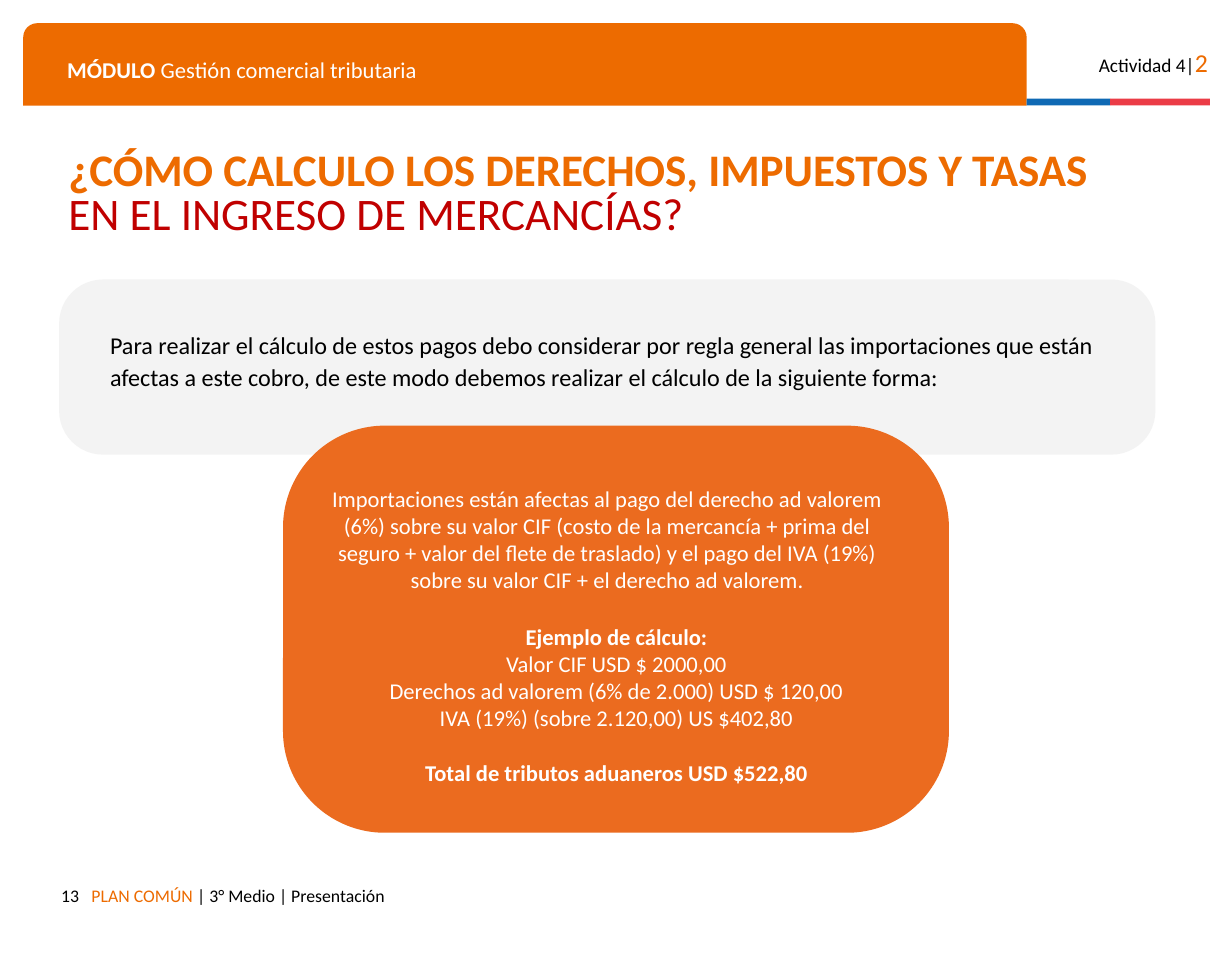
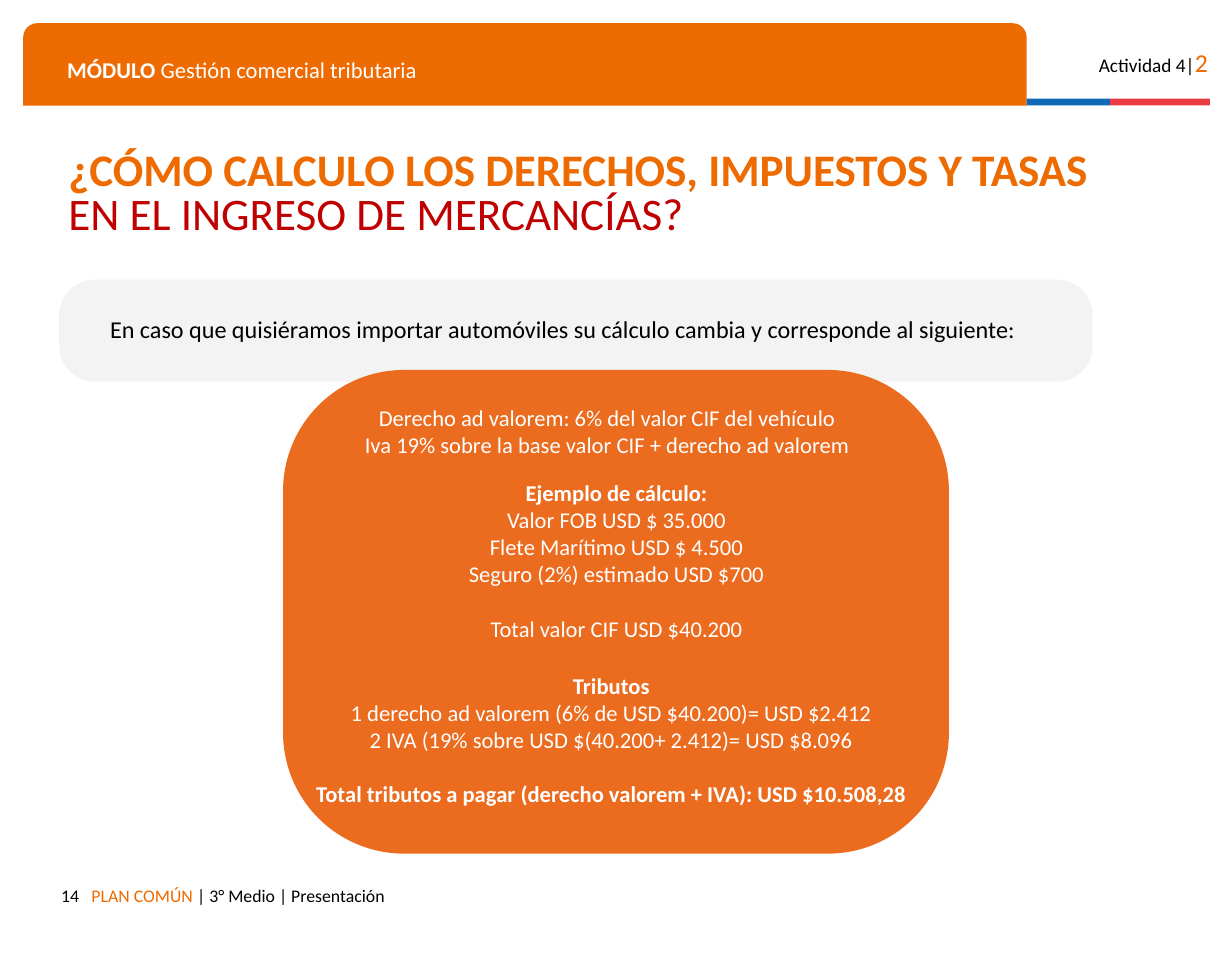
"""Build two slides on import duties with a shared header, title and footer."""
from dataclasses import dataclass

from pptx import Presentation
from pptx.dml.color import RGBColor
from pptx.enum.shapes import MSO_SHAPE
from pptx.enum.text import MSO_ANCHOR, MSO_AUTO_SIZE, PP_ALIGN
from pptx.util import Emu, Pt

PX = 9144
SLIDE_SIZE = (1062, 826)
FIRST_PAGE = 13


@dataclass(frozen=True)
class Theme:
    font: str = "Calibri"
    orange: str = "ED6B00"
    card: str = "EB6B1F"
    panel: str = "F3F3F3"
    blue: str = "0F69B4"
    red: str = "EB3C46"
    dark_red: str = "C00000"
    black: str = "000000"
    white: str = "FFFFFF"
    title_size: int = 28
    number_size: int = 16
    intro_size: int = 15
    body_size: int = 14
    activity_size: int = 12
    footer_size: int = 11
    line_gap: int = 17


THEME = Theme()


@dataclass(frozen=True)
class Line:
    text: str
    bold: bool = False
    gap: int = 0
    color: str = THEME.white


TITLE_BOX = (49, 120, 978, 97)
TITLE = [
    Line("¿CÓMO CALCULO LOS DERECHOS, IMPUESTOS Y TASAS", bold=True, color=THEME.orange),
    Line("EN EL INGRESO DE MERCANCÍAS?", color=THEME.dark_red),
]
HEADER_BARS = [
    (MSO_SHAPE.ROUND_2_SAME_RECTANGLE, (20, 20, 865, 71), THEME.orange, 0.17),
    (MSO_SHAPE.RECTANGLE, (885, 85, 72, 6), THEME.blue, None),
    (MSO_SHAPE.RECTANGLE, (957, 85, 86, 6), THEME.red, None),
]
MODULE = [("MÓDULO", {"bold": True}), (" Gestión comercial tributaria", {})]
ACTIVITY = [
    ("Actividad 4|", {"size": THEME.activity_size}),
    ("2", {"size": THEME.number_size, "color": THEME.orange}),
]
FOOTER = [("PLAN COMÚN ", {"color": THEME.orange}), ("| 3° Medio | Presentación", {})]

SLIDES = [
    {
        "panel": ((51, 241, 945, 151), 0.25),
        "intro": (
            (85, 252, 911, 115),
            "Para realizar el cálculo de estos pagos debo considerar por regla general "
            "las importaciones que están afectas a este cobro, de este modo debemos "
            "realizar el cálculo de la siguiente forma:",
        ),
        "card": (244, 367, 574, 351),
        "texts": [
            ((262, 413, 523, 104), [
                Line("Importaciones están afectas al pago del derecho ad valorem (6%) sobre "
                     "su valor CIF (costo de la mercancía + prima del seguro + valor del "
                     "flete de traslado) y el pago del IVA (19%) sobre su valor CIF + el "
                     "derecho ad valorem."),
            ]),
            ((270, 532, 523, 151), [
                Line("Ejemplo de cálculo:", bold=True),
                Line("Valor CIF USD $ 2000,00"),
                Line("Derechos ad valorem (6% de 2.000) USD $ 120,00"),
                Line("IVA (19%) (sobre 2.120,00) US $402,80"),
                Line("Total de tributos aduaneros USD $522,80", bold=True, gap=THEME.line_gap),
            ]),
        ],
    },
    {
        "panel": ((51, 241, 891, 88), 0.35),
        "intro": (
            (85, 252, 911, 60),
            "En caso que quisiéramos importar automóviles su cálculo cambia y "
            "corresponde al siguiente:",
        ),
        "card": (244, 319, 574, 417),
        "texts": [
            ((262, 343, 523, 57), [
                Line("Derecho ad valorem: 6% del valor CIF del vehículo"),
                Line("Iva 19% sobre la base valor CIF + derecho ad valorem"),
            ]),
            ((270, 408, 523, 151), [
                Line("Ejemplo de cálculo:", bold=True),
                Line("Valor FOB USD $ 35.000"),
                Line("Flete Marítimo USD $ 4.500"),
                Line("Seguro (2%) estimado USD $700"),
                Line("Total valor CIF USD $40.200", gap=THEME.line_gap),
            ]),
            ((262, 574, 530, 128), [
                Line("Tributos", bold=True),
                Line("1 derecho ad valorem (6% de USD $40.200)= USD $2.412"),
                Line("2 IVA (19% sobre USD $(40.200+ 2.412)= USD $8.096"),
                Line("Total tributos a pagar (derecho valorem + IVA): USD $10.508,28",
                     bold=True, gap=THEME.line_gap),
            ]),
        ],
    },
]


def place(box):
    return [Emu(value * PX) for value in box]


def style_font(font, size=None, color=None, bold=None):
    font.name = THEME.font
    if size is not None:
        font.size = Pt(size)
    if color is not None:
        font.color.rgb = RGBColor.from_string(color)
    if bold is not None:
        font.bold = bold


def add_block(slide, preset, box, color, rounding=None):
    shape = slide.shapes.add_shape(preset, *place(box))
    shape.shadow.inherit = False
    shape.fill.solid()
    shape.fill.fore_color.rgb = RGBColor.from_string(color)
    shape.line.fill.background()
    if rounding is not None:
        shape.adjustments[0] = rounding


def prepare_frame(frame, anchor=MSO_ANCHOR.TOP, inset=10):
    frame.word_wrap = True
    frame.auto_size = MSO_AUTO_SIZE.NONE
    frame.vertical_anchor = anchor
    frame.margin_left = frame.margin_right = Emu(10 * PX)
    frame.margin_top = frame.margin_bottom = Emu(inset * PX)
    return frame


def add_frame(slide, box, **options):
    return prepare_frame(slide.shapes.add_textbox(*place(box)).text_frame, **options)


def write_lines(frame, lines, size, alignment, spacing=None):
    for index, line in enumerate(lines):
        paragraph = frame.add_paragraph() if index else frame.paragraphs[0]
        paragraph.text = line.text
        paragraph.alignment = alignment
        paragraph.line_spacing = spacing
        if line.gap:
            paragraph.space_before = Pt(line.gap)
        style_font(paragraph.font, size, line.color, line.bold)


def add_label(slide, box, runs, size, color=THEME.black, alignment=PP_ALIGN.LEFT):
    paragraph = add_frame(slide, box).paragraphs[0]
    paragraph.alignment = alignment
    style_font(paragraph.font, size, color)
    for text, style in runs:
        run = paragraph.add_run()
        run.text = text
        style_font(run.font, **{"size": size, "color": color, **style})


def add_common_parts(slide, page):
    for preset, box, color, rounding in HEADER_BARS:
        add_block(slide, preset, box, color, rounding)
    add_label(slide, (48, 38, 814, 41), MODULE, THEME.body_size, THEME.white)
    add_label(slide, (923, 30, 128, 43), ACTIVITY, THEME.activity_size,
              alignment=PP_ALIGN.RIGHT)
    add_label(slide, (20, 753, 58, 29), [(str(page), {})], THEME.footer_size,
              alignment=PP_ALIGN.RIGHT)
    add_label(slide, (69, 753, 714, 38), FOOTER, THEME.footer_size)

    title = slide.shapes.title
    title.left, title.top, title.width, title.height = place(TITLE_BOX)
    frame = prepare_frame(title.text_frame, MSO_ANCHOR.MIDDLE)
    write_lines(frame, TITLE, THEME.title_size, PP_ALIGN.LEFT, 0.8)


def add_content(slide, content):
    panel_box, rounding = content["panel"]
    add_block(slide, MSO_SHAPE.ROUNDED_RECTANGLE, panel_box, THEME.panel, rounding)
    intro_box, intro = content["intro"]
    frame = add_frame(slide, intro_box, anchor=MSO_ANCHOR.MIDDLE)
    write_lines(frame, [Line(intro, color=THEME.black)], THEME.intro_size, PP_ALIGN.LEFT, 1.1)
    add_block(slide, MSO_SHAPE.ROUNDED_RECTANGLE, content["card"], THEME.card, 0.25)
    for box, lines in content["texts"]:
        write_lines(add_frame(slide, box, inset=5), lines, THEME.body_size, PP_ALIGN.CENTER)


def main():
    presentation = Presentation()
    presentation.slide_width, presentation.slide_height = place(SLIDE_SIZE)
    title_only = presentation.slide_layouts[5]
    for page, content in enumerate(SLIDES, start=FIRST_PAGE):
        slide = presentation.slides.add_slide(title_only)
        add_common_parts(slide, page)
        add_content(slide, content)
    presentation.save("out.pptx")


if __name__ == "__main__":
    main()
